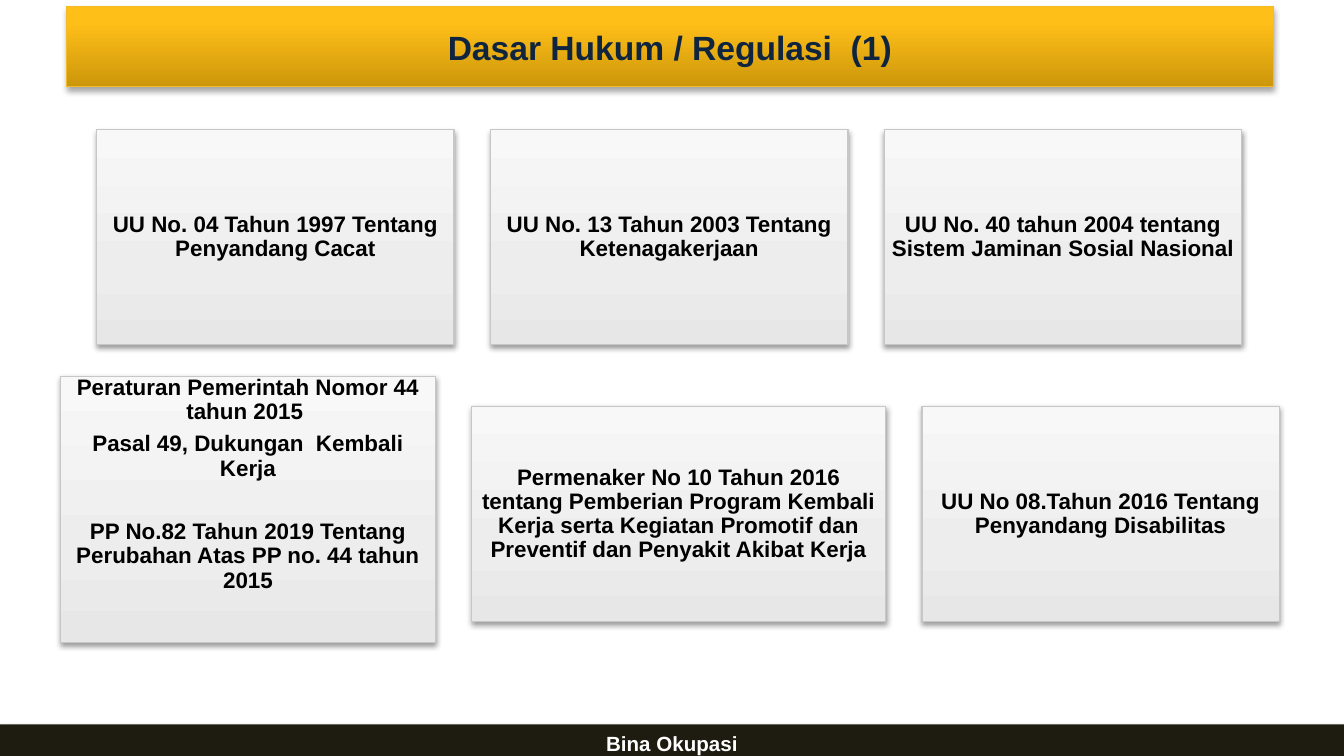
from lxml import etree
from pptx import Presentation
from pptx.dml.color import RGBColor
from pptx.enum.shapes import MSO_SHAPE
from pptx.enum.text import MSO_ANCHOR, PP_ALIGN
from pptx.oxml.ns import qn
from pptx.util import Inches, Pt

RECT = MSO_SHAPE.RECTANGLE
CENTER = PP_ALIGN.CENTER
TOP, MIDDLE = MSO_ANCHOR.TOP, MSO_ANCHOR.MIDDLE

COLS, ROWS = 100, 56.25
CELL = Inches(0.1)
GAP = 2.7
FONT = "Arial"
COLORS = {
    "title": "0F243E", "title_line": "F3BB27", "card_text": "000000",
    "card_line": "C7C7C7", "footer": "1E1C11", "footer_text": "FFFFFF",
    "shadow": "000000",
}
CARD_STOPS = [(0, "E7E7E7"), (35, "EDEDED"), (100, "F8F8F8")]
TITLE_STOPS = [(0, "CC970B"), (80, "FFBF19"), (100, "FFC01A")]

UPPER_CARDS = [
    (26.6, 0, 16, ["UU No. 04 Tahun 1997 Tentang Penyandang Cacat"]),
    (26.6, 0, 16, ["UU No. 13 Tahun 2003 Tentang Ketenagakerjaan"]),
    (26.6, 0, 16, ["UU No. 40 tahun 2004 tentang Sistem Jaminan Sosial Nasional"]),
]
LOWER_CARDS = [
    (27.9, 0, 19.8, [
        "Peraturan Pemerintah Nomor 44 tahun 2015 ",
        "Pasal 49, Dukungan  Kembali Kerja",
        "PP No.82 Tahun 2019 Tentang Perubahan Atas PP no. 44 tahun 2015",
    ]),
    (30.8, 2.25, 16, [
        "Permenaker No 10 Tahun 2016 tentang Pemberian Program Kembali "
        "Kerja serta Kegiatan Promotif dan Preventif dan Penyakit Akibat Kerja",
    ]),
    (26.6, 2.25, 16, ["UU No 08.Tahun 2016 Tentang Penyandang Disabilitas"]),
]


def rgb(name):
    return RGBColor.from_string(COLORS[name])


def add_color(parent, value):
    return etree.SubElement(parent, qn("a:srgbClr"), val=value)


def set_gradient(sp, stops):
    sp.fill.gradient()
    sp.fill.gradient_angle = 90
    stop_list = sp._element.spPr.find(qn("a:gradFill")).find(qn("a:gsLst"))
    for old in list(stop_list):
        stop_list.remove(old)
    for pos, value in stops:
        add_color(etree.SubElement(stop_list, qn("a:gs"), pos=str(pos * 1000)), value)


def set_shadow(sp, alpha, distance):
    sp.shadow.inherit = False
    effects = sp._element.spPr.find(qn("a:effectLst"))
    shadow = etree.SubElement(
        effects, qn("a:outerShdw"), blurRad=str(Pt(3.1)), dist=str(Pt(distance)),
        dir="5400000", algn="t", rotWithShape="0")
    color = add_color(shadow, COLORS["shadow"])
    etree.SubElement(color, qn("a:alpha"), val=str(alpha * 1000))


def add_panel(s, box, alpha, distance, line=None):
    sp = s.shapes.add_shape(RECT, *(round(v * CELL) for v in box))
    set_shadow(sp, alpha, distance)
    if line:
        sp.line.color.rgb = rgb(line)
        sp.line.width = Pt(0.75)
    else:
        sp.line.fill.background()
    return sp


def write_text(sp, lines, size, color, anchor, inset):
    tf = sp.text_frame
    tf.word_wrap = True
    tf.vertical_anchor = anchor
    tf.margin_left = tf.margin_right = Inches(inset)
    tf.margin_top = tf.margin_bottom = Inches(0.05)
    for i, line in enumerate(lines):
        p = tf.paragraphs[0] if i == 0 else tf.add_paragraph()
        p.text = line
        p.alignment = CENTER
        p.font.name = FONT
        p.font.size = Pt(size)
        p.font.bold = True
        p.font.color.rgb = rgb(color)
    return tf


def add_title(s, box):
    sp = add_panel(s, box, 35, 1.8, "title_line")
    set_gradient(sp, TITLE_STOPS)
    write_text(sp, ["Dasar Hukum / Regulasi  (1)"], 18, "title", MIDDLE, 0.1)


def add_card(s, box, lines):
    sp = add_panel(s, box, 38, 1.6, "card_line")
    set_gradient(sp, CARD_STOPS)
    stacked = len(lines) > 1
    tf = write_text(sp, lines, 12, "card_text", TOP if stacked else MIDDLE, 0.05)
    for p in tf.paragraphs:
        p.line_spacing = 0.9
        p.space_after = Pt(4.2)
    if stacked:
        tf.margin_top = 0
        tf.paragraphs[-1].space_before = Pt(17)


def add_card_row(s, left, top, cards):
    for width, drop, height, lines in cards:
        add_card(s, (left, top + drop, width, height), lines)
        left += width + GAP


def add_footer(s, box):
    sp = add_panel(s, box, 35, 1.8)
    sp.fill.solid()
    sp.fill.fore_color.rgb = rgb("footer")
    write_text(sp, ["Bina Okupasi"], 11, "footer_text", TOP, 0.1)


def main():
    prs = Presentation()
    prs.slide_width = round(COLS * CELL)
    prs.slide_height = round(ROWS * CELL)
    s = prs.slides.add_slide(prs.slide_layouts[6])
    add_card_row(s, 7.2, 9.65, UPPER_CARDS)
    add_card_row(s, 4.5, 28, LOWER_CARDS)
    add_title(s, (4.95, 0.5, 89.8, 5.95))
    add_footer(s, (-0.2, 53.9, COLS + 0.4, 2.9))
    prs.save("out.pptx")


if __name__ == "__main__":
    main()
